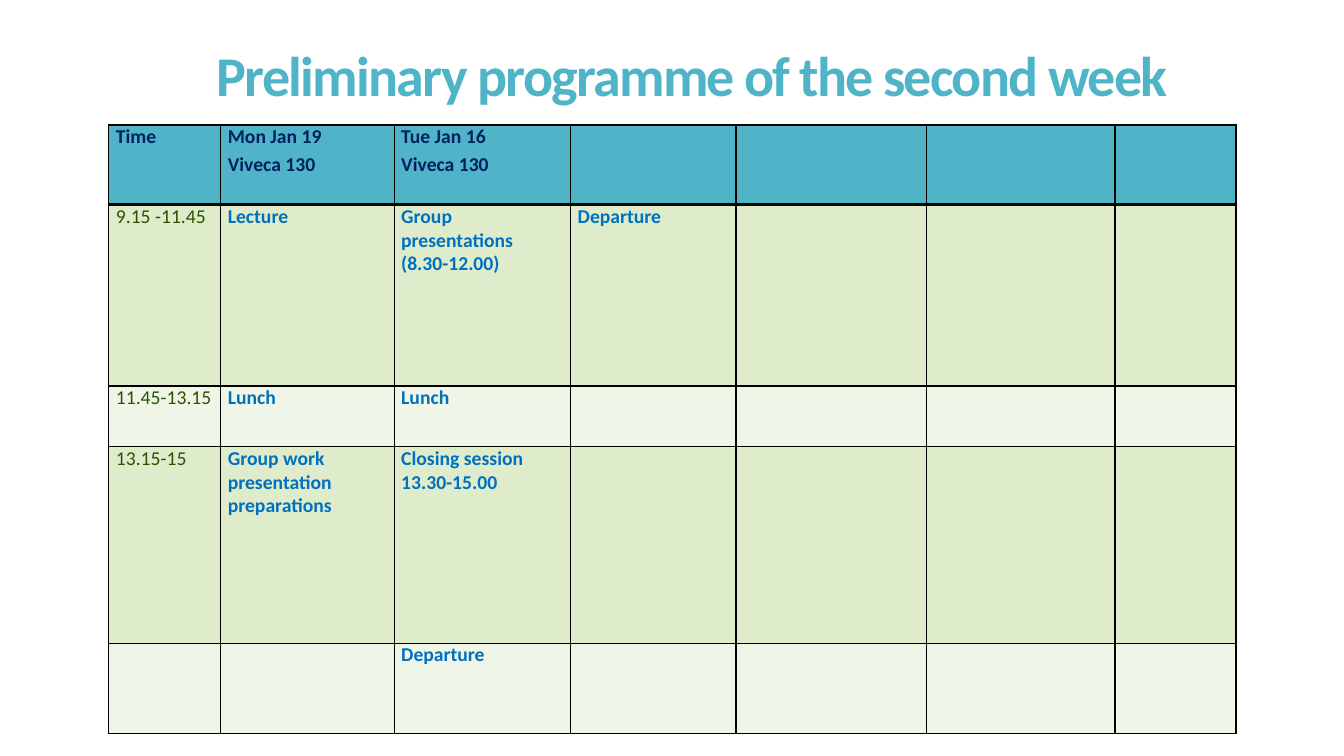
"""Build the timetable slide for the second week of a course."""
import dataclasses

import lxml.etree
import pptx
import pptx.dml.color
import pptx.enum.text
import pptx.oxml.ns
import pptx.util

EMU_PER_PX = 9144
COLOURS = {
    "teal": "50B4C8",
    "navy": "002060",
    "green": "2A5400",
    "blue": "0070C0",
    "dark_band": "DEECCB",
    "light_band": "EFF6E7",
    "border": "000000",
}
COLUMN_WIDTHS = [111, 172, 175, 164, 189, 187, 120]


@dataclasses.dataclass(frozen=True)
class TextStyle:
    size: int
    colour: str
    bold: bool = True
    font: str = "Calibri"
    spacing: int = 0


@dataclasses.dataclass(frozen=True)
class ProgrammeRow:
    height: int
    fill: str
    texts: tuple[str, ...]
    top_border: int = 1
    bottom_border: int = 1


HEADER = TextStyle(14, "navy")
TIME = TextStyle(14, "green", bold=False)
ACTIVITY = TextStyle(14, "blue")
TITLE_RUNS = [
    (" ", TextStyle(54, "teal", False, "Times New Roman", -120)),
    ("Preliminary programme of the second week", TextStyle(40, "teal", spacing=-120)),
]
ROWS = [
    ProgrammeRow(79, "teal", ("Time", "Mon Jan 19\nViveca 130", "Tue Jan 16\nViveca 130"), bottom_border=3),
    ProgrammeRow(
        180, "dark_band",
        ("9.15 -11.45", "Lecture", "Group presentations (8.30-12.00)", "Departure"),
        top_border=3,
    ),
    ProgrammeRow(60, "light_band", ("11.45-13.15", "Lunch", "Lunch")),
    ProgrammeRow(
        195, "dark_band",
        ("13.15-15", "Group work presentation preparations", "Closing session 13.30-15.00"),
    ),
    ProgrammeRow(90, "light_band", ("", "", "Departure")),
]


def px(length: int) -> pptx.util.Emu:
    return pptx.util.Emu(length * EMU_PER_PX)


def rgb(name: str) -> pptx.dml.color.RGBColor:
    return pptx.dml.color.RGBColor.from_string(COLOURS[name])


def add_run(paragraph, text: str, style: TextStyle) -> None:
    run = paragraph.add_run()
    run.text = text
    run.font.name = style.font
    run.font.size = pptx.util.Pt(style.size)
    run.font.bold = style.bold
    run.font.color.rgb = rgb(style.colour)
    if style.spacing:
        run._r.get_or_add_rPr().set("spc", str(style.spacing))


def add_title(slide) -> None:
    frame = slide.shapes.add_textbox(px(50), px(28), px(1254), px(89)).text_frame
    frame.word_wrap = True
    frame.vertical_anchor = pptx.enum.text.MSO_ANCHOR.MIDDLE
    paragraph = frame.paragraphs[0]
    paragraph.alignment = pptx.enum.text.PP_ALIGN.CENTER
    paragraph.line_spacing = 0.85
    for text, style in TITLE_RUNS:
        add_run(paragraph, text, style)


def add_borders(cell, row: ProgrammeRow) -> None:
    properties = cell._tc.get_or_add_tcPr()
    widths = {"lnL": 1, "lnR": 1, "lnT": row.top_border, "lnB": row.bottom_border}
    for tag, points in widths.items():
        line = lxml.etree.SubElement(
            properties, pptx.oxml.ns.qn(f"a:{tag}"), w=str(pptx.util.Pt(points))
        )
        fill = lxml.etree.SubElement(line, pptx.oxml.ns.qn("a:solidFill"))
        lxml.etree.SubElement(fill, pptx.oxml.ns.qn("a:srgbClr"), val=COLOURS["border"])


def fill_cell(cell, row: ProgrammeRow, text: str, style: TextStyle) -> None:
    cell.margin_left = cell.margin_right = px(7)
    cell.margin_top = cell.margin_bottom = px(0)
    add_borders(cell, row)
    cell.fill.solid()
    cell.fill.fore_color.rgb = rgb(row.fill)
    if not text:
        return
    for index, line in enumerate(text.split("\n")):
        paragraph = cell.text_frame.add_paragraph() if index else cell.text_frame.paragraphs[0]
        if index:
            paragraph.space_before = pptx.util.Pt(2.8)
        add_run(paragraph, line, style)


def add_programme(slide) -> None:
    height = sum(row.height for row in ROWS)
    table = slide.shapes.add_table(
        len(ROWS), len(COLUMN_WIDTHS), px(108), px(124), px(sum(COLUMN_WIDTHS)), px(height)
    ).table
    table.horz_banding = False
    for column, width in zip(table.columns, COLUMN_WIDTHS):
        column.width = px(width)
    for row_index, row in enumerate(ROWS):
        table.rows[row_index].height = px(row.height)
        for column_index in range(len(COLUMN_WIDTHS)):
            text = row.texts[column_index] if column_index < len(row.texts) else ""
            body_style = ACTIVITY if column_index else TIME
            style = body_style if row_index else HEADER
            fill_cell(table.cell(row_index, column_index), row, text, style)


def main() -> None:
    presentation = pptx.Presentation()
    presentation.slide_width = px(1333)
    presentation.slide_height = px(750)
    slide = presentation.slides.add_slide(presentation.slide_layouts[6])
    add_title(slide)
    add_programme(slide)
    presentation.save("out.pptx")


if __name__ == "__main__":
    main()
